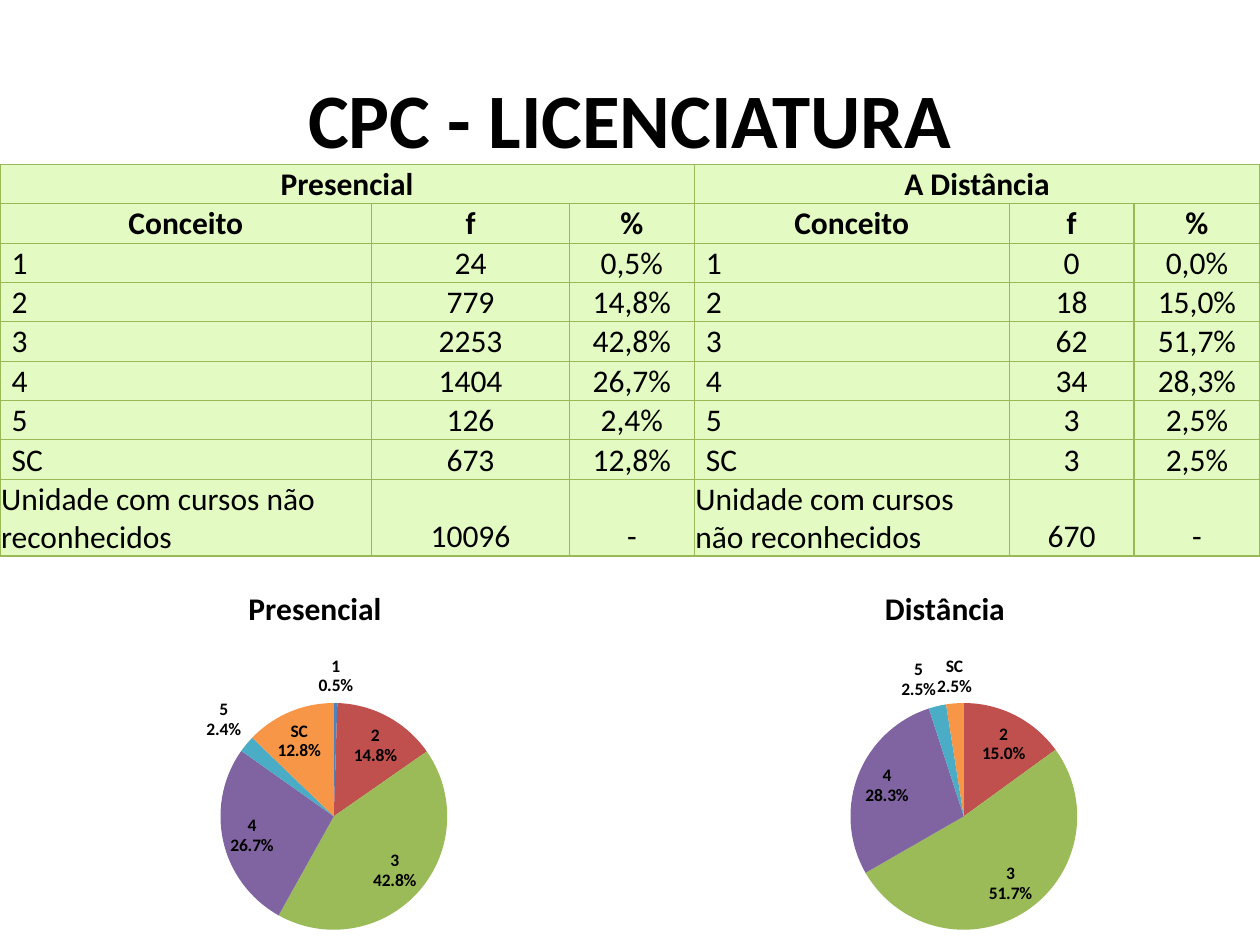
from lxml.etree import SubElement
from pptx import Presentation
from pptx.chart.data import CategoryChartData as ChartData
from pptx.dml.color import RGBColor
from pptx.enum.chart import XL_CHART_TYPE as ChartType, XL_LABEL_POSITION as LabelPosition
from pptx.enum.text import MSO_ANCHOR as Anchor, PP_ALIGN as Align
from pptx.oxml import parse_xml
from pptx.oxml.ns import nsdecls, qn
from pptx.util import Pt

FONT = "Calibri"
BLACK, PALE_GREEN, GREEN = "000000", "E3FBC2", "98B955"
SLICES = ["4F81BD", "C0504D", "9BBB59", "8064A2", "4BACC6", "F79646"]
CONCEPTS = ["1", "2", "3", "4", "5", "SC"]
UNRECOGNISED = "Unidade com cursos não reconhecidos"
COLUMNS = [212.4, 113, 71.3, 180, 71.3, 72]
ROWS = [22.5] * 8 + [37]
PIE_AREA = {"x": 0.35, "y": 0.36, "w": 0.36, "h": 0.6}

PRESENCIAL = {
    "heading": "Presencial",
    "chart_title": "Presencial",
    "counts": [24, 779, 2253, 1404, 126, 673],
    "shares": [0.5, 14.8, 42.8, 26.7, 2.4, 12.8],
    "unrecognised": 10096,
}
DISTANCIA = {
    "heading": "A Distância",
    "chart_title": "Distância",
    "counts": [0, 18, 62, 34, 3, 3],
    "shares": [0, 15, 51.7, 28.3, 2.5, 2.5],
    "unrecognised": 670,
}


def colour(value):
    return RGBColor.from_string(value)


def apply(target, settings):
    for name, value in settings.items():
        setattr(target, name, value)


def style_font(font, size, bold):
    apply(font, {"name": FONT, "size": Pt(size), "bold": bold})
    font.color.rgb = colour(BLACK)


def write(frame, text, size, bold, align):
    paragraph = frame.paragraphs[0]
    paragraph.alignment = align
    run = paragraph.add_run()
    run.text = text
    style_font(run.font, size, bold)


def add_title(slide, text):
    frame = slide.shapes.add_textbox(Pt(36), Pt(22), Pt(648), Pt(90)).text_frame
    apply(frame, {"word_wrap": True, "vertical_anchor": Anchor.MIDDLE})
    write(frame, text, 44, True, Align.CENTER)


def add_borders(cell):
    properties = cell._tc.get_or_add_tcPr()
    for position, side in enumerate(["lnL", "lnR", "lnT", "lnB"]):
        properties.insert(position, parse_xml(
            f'<a:{side} {nsdecls("a")} w="{Pt(0.75)}"><a:solidFill>'
            f'<a:srgbClr val="{GREEN}"/></a:solidFill></a:{side}>'))


def style_cell(cell, indent):
    apply(cell, {
        "margin_left": Pt(indent),
        "margin_right": Pt(0.7),
        "margin_top": Pt(0.7),
        "margin_bottom": Pt(0),
        "vertical_anchor": Anchor.BOTTOM,
    })
    cell.fill.solid()
    cell.fill.fore_color.rgb = colour(PALE_GREEN)
    add_borders(cell)


def mode_rows(mode):
    yield mode["heading"], "", ""
    yield "Conceito", "f", "%"
    for concept, count, share in zip(CONCEPTS, mode["counts"], mode["shares"]):
        yield concept, str(count), f"{share:.1f}%".replace(".", ",")
    yield UNRECOGNISED, str(mode["unrecognised"]), "-"


def add_results_table(slide, modes):
    table = slide.shapes.add_table(
        len(ROWS), len(COLUMNS), Pt(0), Pt(94), Pt(720), Pt(sum(ROWS))).table
    apply(table, {"first_row": False, "horz_banding": False})
    for column, width in zip(table.columns, COLUMNS):
        column.width = Pt(width)
    for row, height in zip(table.rows, ROWS):
        row.height = Pt(height)
    for first_column, mode in zip((0, 3), modes):
        for row, values in enumerate(mode_rows(mode)):
            header = row < 2
            for offset, text in enumerate(values):
                cell = table.cell(row, first_column + offset)
                is_label = offset == 0 and not header
                style_cell(cell, 6.7 if is_label and text in CONCEPTS else 0.7)
                if text:
                    write(cell.text_frame, text, 18, header,
                          Align.LEFT if is_label else Align.CENTER)
        table.cell(0, first_column).merge(table.cell(0, first_column + 2))


def place_pie(chart):
    area = chart._chartSpace.chart.plotArea
    for old in area.findall(qn("c:layout")):
        area.remove(old)
    layout = parse_xml(f'<c:layout {nsdecls("c")}/>')
    manual = SubElement(layout, qn("c:manualLayout"))
    fields = {"layoutTarget": "inner", "xMode": "edge", "yMode": "edge", **PIE_AREA}
    for name, value in fields.items():
        SubElement(manual, qn(f"c:{name}")).set("val", str(value))
    area.insert(0, layout)


def label_slices(series, shares):
    labels = series.data_labels
    apply(labels, {
        "show_category_name": True,
        "show_percentage": True,
        "show_value": False,
        "number_format": "0.0%",
        "number_format_is_linked": False,
        "position": LabelPosition.BEST_FIT,
    })
    style_font(labels.font, 10, True)
    element = labels._element
    element.find(qn("c:showBubbleSize")).addnext(
        parse_xml(f'<c:separator {nsdecls("c")}>\n</c:separator>'))
    empty_slices = [index for index, share in enumerate(shares) if not share]
    for position, index in enumerate(empty_slices):
        element.insert(position, parse_xml(
            f'<c:dLbl {nsdecls("c")}><c:idx val="{index}"/><c:delete val="1"/></c:dLbl>'))


def add_pie(slide, mode, left):
    shares = ChartData()
    shares.categories = CONCEPTS
    shares.add_series(mode["chart_title"], mode["shares"])
    chart = slide.shapes.add_chart(
        ChartType.PIE, Pt(left), Pt(324), Pt(360), Pt(216), shares).chart
    apply(chart, {"has_legend": False, "has_title": True})
    style_font(chart.font, 10, False)
    write(chart.chart_title.text_frame, mode["chart_title"], 18, True, Align.CENTER)
    chart.chart_title.include_in_layout = False
    plot = chart.plots[0]
    plot.vary_by_categories = True
    series = plot.series[0]
    for index, slice_colour in enumerate(SLICES):
        fill = series.points[index].format.fill
        fill.solid()
        fill.fore_color.rgb = colour(slice_colour)
    label_slices(series, mode["shares"])
    place_pie(chart)


def main():
    deck = Presentation()
    apply(deck, {"slide_width": Pt(720), "slide_height": Pt(540)})
    slide = deck.slides.add_slide(deck.slide_layouts[6])
    modes = [PRESENCIAL, DISTANCIA]
    add_title(slide, "CPC - LICENCIATURA")
    add_results_table(slide, modes)
    for index, mode in enumerate(modes):
        add_pie(slide, mode, 360 * index)
    deck.save("out.pptx")


if __name__ == "__main__":
    main()
